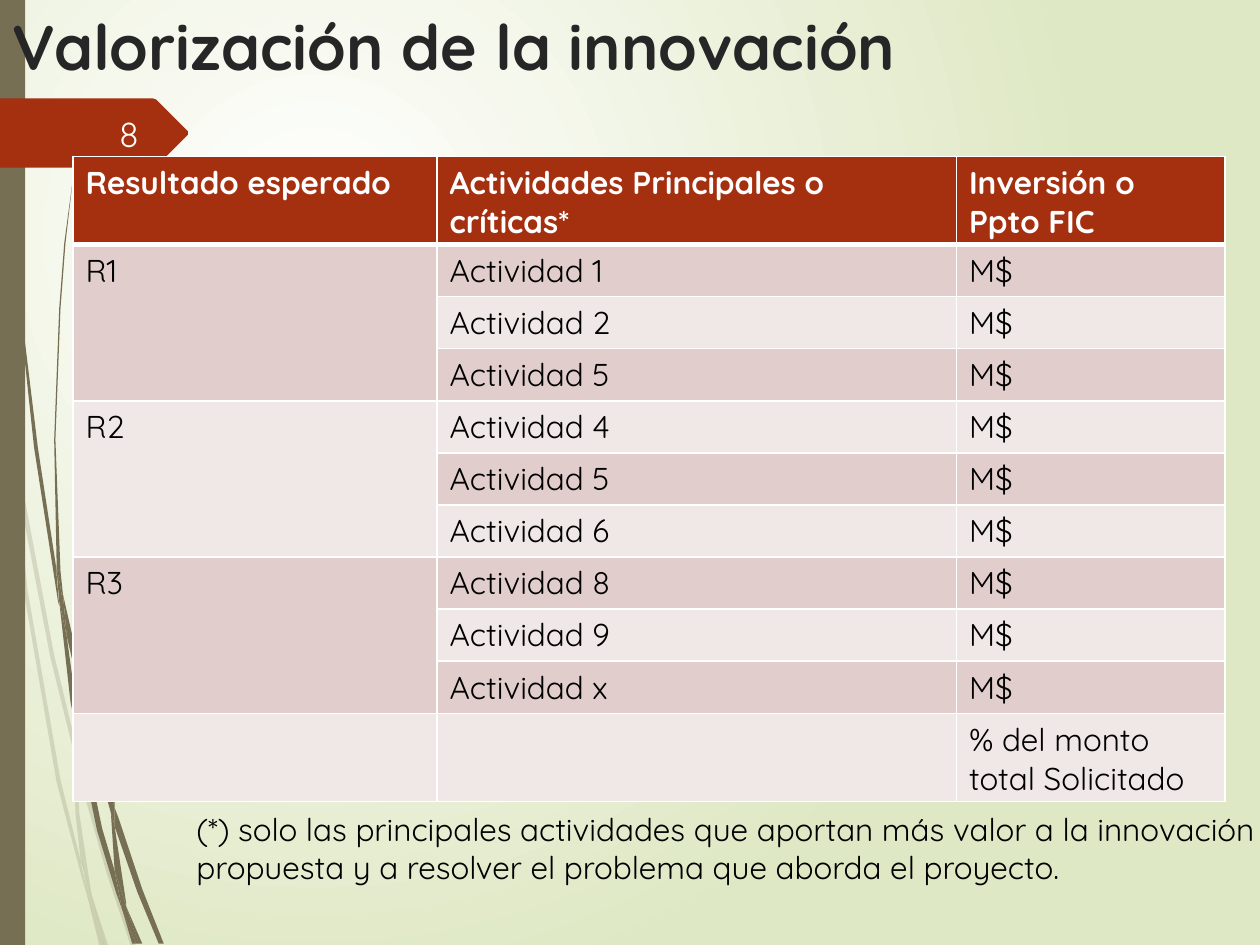
from lxml import etree
from pptx import Presentation
from pptx.dml.color import RGBColor
from pptx.enum.shapes import MSO_SHAPE
from pptx.enum.text import MSO_ANCHOR, MSO_AUTO_SIZE, PP_ALIGN
from pptx.oxml.ns import qn
from pptx.util import Cm, Pt

RECTANGLE = MSO_SHAPE.RECTANGLE
TOP, MIDDLE = MSO_ANCHOR.TOP, MSO_ANCHOR.MIDDLE
LEFT, RIGHT = PP_ALIGN.LEFT, PP_ALIGN.RIGHT
GROW = MSO_AUTO_SIZE.SHAPE_TO_FIT_TEXT

FONT = "Quicksand"
BROWN, RUST, WHITE, BLACK = "766F54", "A53010", "FFFFFF", "000000"
BANDS = ["E1CDCC", "F0E8E7"]
OUTLINE_UNIT = Cm(0.0254)

PALE_WISPS = [
    [(8, 350), (6, 322), (0, 282), (0, 299), (7, 344)],
    [(40, 522), (59, 599), (59, 586), (43, 520), (10, 345), (12, 376)],
    [(64, 607), (61, 596), (61, 610), (85, 694), (104, 751), (108, 751), (88, 692)],
    [(83, 751), (86, 751), (73, 711)],
    [(64, 683), (48, 619), (22, 469), (12, 376), (8, 350), (19, 470), (45, 621),
     (64, 693), (70, 714), (69, 707)],
    [(58, 599), (60, 646), (64, 683), (67, 692), (73, 711), (72, 706), (63, 646),
     (61, 610), (61, 608)],
    [(61, 584), (76, 462), (111, 349), (159, 245), (187, 198), (201, 175), (217, 154),
     (217, 153), (201, 175), (186, 197), (158, 244), (110, 348), (75, 461), (59, 584),
     (59, 586), (61, 596)],
    [(70, 714), (79, 751), (82, 751)],
    [(61, 608), (61, 610), (61, 596), (59, 586), (58, 599)],
    [(67, 692), (65, 683), (69, 707), (70, 714), (82, 751), (83, 751), (73, 711)],
]
DARK_WISPS = [
    [(5, 110), (14, 233), (27, 355), (46, 477), (47, 481), (45, 457), (45, 453),
     (30, 355), (15, 232), (6, 109), (4, 48), (3, 0), (2, 0), (3, 48)],
    [(73, 592), (88, 645), (88, 633), (88, 631), (77, 590), (50, 472), (53, 505)],
    [(94, 649), (91, 641), (91, 656), (109, 708), (126, 749), (130, 749), (113, 706)],
    [(91, 691), (81, 657), (60, 556), (53, 505), (47, 477), (56, 557), (77, 659),
     (92, 708), (97, 722), (96, 717)],
    [(50, 472), (48, 453), (44, 349), (48, 245), (52, 193), (58, 141), (51, 193),
     (47, 245), (43, 349), (45, 449), (49, 472)],
    [(110, 749), (113, 749), (100, 719)],
    [(47, 477), (53, 505), (50, 472), (49, 472), (45, 449), (45, 453)],
    [(91, 633), (103, 552), (131, 476), (169, 406), (191, 374), (203, 359), (216, 344),
     (215, 344), (203, 358), (191, 373), (168, 405), (129, 474), (101, 551), (88, 631),
     (91, 641)],
    [(97, 722), (105, 749), (108, 749)],
    [(88, 645), (91, 691), (96, 706), (100, 719), (100, 716), (91, 656), (90, 651)],
    [(88, 645), (90, 651), (91, 656), (91, 641), (88, 631), (88, 633)],
    [(96, 706), (91, 691), (96, 717), (97, 722), (108, 749), (110, 749), (100, 719)],
]
PAGE_ARROW = [(149, 107), (124, 132), (121, 133), (0, 133), (0, 78), (121, 78),
              (124, 79), (149, 104)]

HEADERS = ["Resultado esperado", "Actividades Principales o críticas*", "Inversión o Ppto FIC"]
RESULTS = {"R1": "125", "R2": "456", "R3": "89x"}
COLUMN_WIDTHS = [7.34, 10.47, 5.41]
ROW_HEIGHT = 1.05


def color(value):
    return RGBColor.from_string(value)


def paint(shape, fill, opacity=100):
    shape.shadow.inherit = False
    shape.fill.solid()
    shape.fill.fore_color.rgb = color(fill)
    shape.line.fill.background()
    if opacity < 100:
        tint = shape.fill._xPr.find(qn("a:solidFill"))[0]
        etree.SubElement(tint, qn("a:alpha"), val=str(opacity * 1000))


def add_outline(page, points, fill, opacity=100):
    builder = page.shapes.build_freeform(*points[0], scale=OUTLINE_UNIT)
    builder.add_line_segments(points[1:], close=True)
    paint(builder.convert_to_shape(), fill, opacity)


def style_text(frame, size, fill, bold=False, align=LEFT):
    for para in frame.paragraphs:
        para.alignment = align
        for span in para.runs:
            span.font.name = FONT
            span.font.size = Pt(size)
            span.font.bold = bold
            span.font.color.rgb = color(fill)


def add_text(page, text, left, top, width, height, size, fill,
             bold=False, align=LEFT, anchor=TOP):
    box = page.shapes.add_textbox(Cm(left), Cm(top), Cm(width), Cm(height))
    frame = box.text_frame
    frame.word_wrap = True
    frame.vertical_anchor = anchor
    frame.text = text
    style_text(frame, size, fill, bold, align)
    return box


def set_background(page):
    fill = page.background.fill
    fill.gradient()
    for stop, value in zip(fill.gradient_stops, [WHITE, "DFE8C4"]):
        stop.color.rgb = color(value)
    gradient = page.background._cSld.find(".//" + qn("a:gradFill"))
    gradient.remove(gradient.find(qn("a:lin")))
    shade = etree.SubElement(gradient, qn("a:path"), path="circle")
    etree.SubElement(shade, qn("a:fillToRect"), l="50000", t="50000", r="100000", b="100000")


def set_borders(cell, header):
    properties = cell._tc.get_or_add_tcPr()
    widths = {"lnL": 1, "lnR": 1, "lnT": 1, "lnB": 3 if header else 1}
    for index, (side, width) in enumerate(widths.items()):
        line = etree.Element(qn("a:" + side), w=str(Pt(width)))
        solid = etree.SubElement(line, qn("a:solidFill"))
        etree.SubElement(solid, qn("a:srgbClr"), val=WHITE)
        properties.insert(index, line)


def table_rows():
    rows = [HEADERS]
    for result, activities in RESULTS.items():
        for index, activity in enumerate(activities):
            rows.append([result if index == 0 else "", f"Actividad {activity}", "M$"])
    return rows + [["", "", "% del monto total Solicitado"]]


def add_results_table(page):
    rows = table_rows()
    table = page.shapes.add_table(len(rows), len(HEADERS), Cm(1.47), Cm(3.15),
                                  Cm(sum(COLUMN_WIDTHS)), Cm(ROW_HEIGHT * len(rows))).table
    for column, width in zip(table.columns, COLUMN_WIDTHS):
        column.width = Cm(width)
    for row_index, texts in enumerate(rows):
        header = row_index == 0
        for column_index, text in enumerate(texts):
            cell = table.cell(row_index, column_index)
            cell.text = text
            cell.fill.solid()
            cell.fill.fore_color.rgb = color(RUST if header else BANDS[(row_index - 1) % 2])
            set_borders(cell, header)
            style_text(cell.text_frame, 18, WHITE if header else BLACK, header)
            if not text:
                cell.text_frame.paragraphs[0].font.size = Pt(18)
    first = 1
    for activities in RESULTS.values():
        last = first + len(activities) - 1
        table.cell(first, 0).merge(table.cell(last, 0))
        first = last + 1


def main():
    deck = Presentation()
    deck.slide_width, deck.slide_height = Cm(25.4), Cm(19.05)
    page = deck.slides.add_slide(deck.slide_layouts[6])
    set_background(page)
    for points in PALE_WISPS:
        add_outline(page, points, BROWN, 20)
    for points in DARK_WISPS:
        add_outline(page, points, BROWN)
    side_bar = page.shapes.add_shape(RECTANGLE, 0, 0, Cm(0.51), deck.slide_height)
    paint(side_bar, BROWN)
    add_outline(page, PAGE_ARROW, RUST)
    add_text(page, "Valorización de la innovación", 0, 0.03, 25.4, 2.9, 36, "262626", bold=True)
    add_results_table(page)
    add_text(page, "8", 1.42, 2.18, 1.63, 1.02, 20, "FEFFFF", align=RIGHT, anchor=MIDDLE)
    footnote = add_text(page, "(*) solo las principales actividades que aportan más valor a la "
                        "innovación propuesta y a resolver el problema que aborda el proyecto.",
                        3.71, 16.21, 22.61, 1.8, 18, BLACK)
    footnote.text_frame.auto_size = GROW
    deck.save("out.pptx")


if __name__ == "__main__":
    main()
